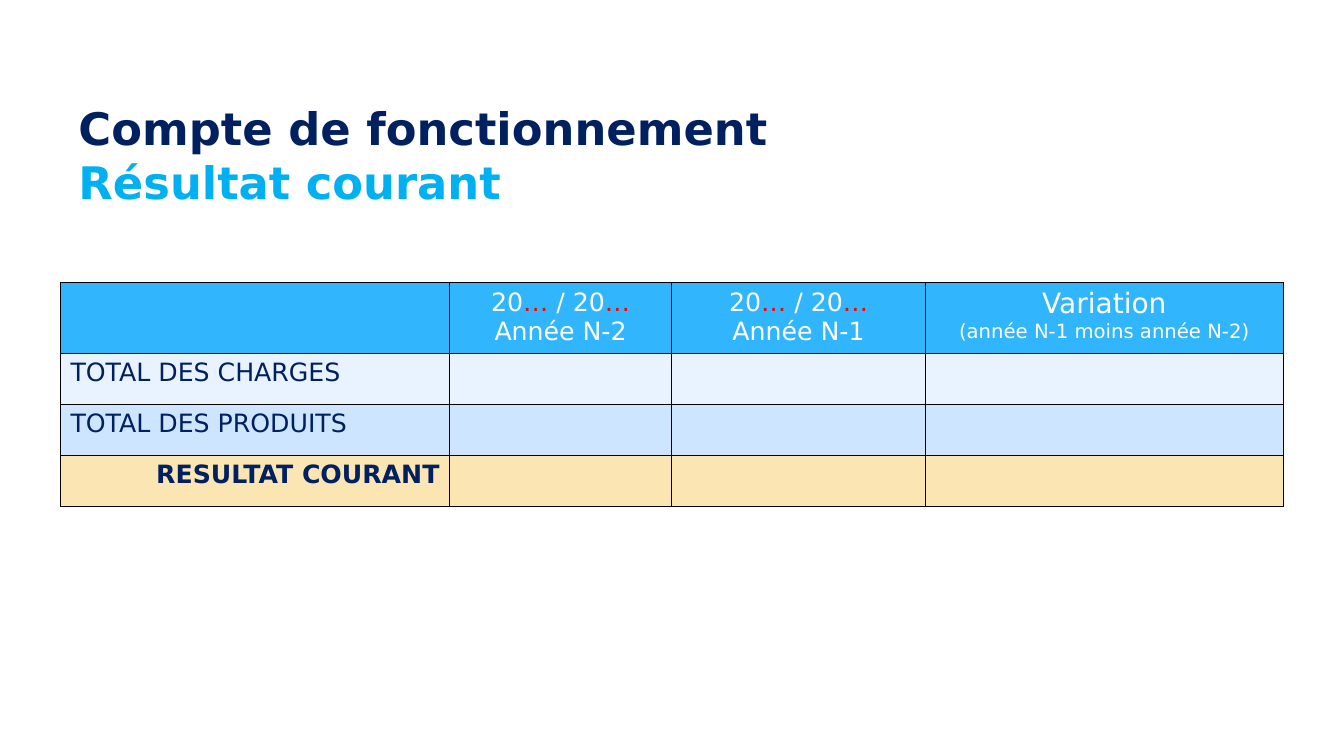
from pptx import Presentation
from pptx.dml.color import RGBColor as Rgb
from pptx.enum.text import PP_ALIGN as Align, MSO_ANCHOR as Anchor
from pptx.oxml import parse_xml
from pptx.oxml.ns import nsdecls
from pptx.util import Pt

FONT = "DejaVu Sans"
NAVY, SKY, WHITE, RED, BLACK = "002060", "00B0F0", "FFFFFF", "FF0000", "000000"
HEAD, PALE, LIGHT, SAND = "31B6FD", "E8F3FF", "CDE5FE", "FBE6B3"
WIDTHS = [278, 158.5, 181.5, 255.4]
HEIGHTS = [49.4, 36.5, 36.5, 36.5]


def color(code):
    return Rgb.from_string(code)


def add_run(para, text, size, tint, bold=False):
    run = para.add_run()
    run.text = text
    font = run.font
    font.name, font.size, font.bold = FONT, Pt(size), bold
    font.color.rgb = color(tint)


def add_title(slide):
    box = slide.shapes.add_textbox(Pt(49), Pt(66.2), Pt(761), Pt(62.6))
    frame = box.text_frame
    frame.word_wrap = True
    frame.vertical_anchor = Anchor.TOP
    frame.margin_top = Pt(6)
    para = frame.paragraphs[0]
    add_run(para, "Compte de fonctionnement", 32, NAVY, True)
    para.add_line_break()
    add_run(para, "Résultat courant", 32, SKY, True)


def add_edges(cell):
    # Borders come before the fill in the cell properties
    props = cell._tc.get_or_add_tcPr()
    for spot, side in enumerate(("lnL", "lnR", "lnT", "lnB")):
        props.insert(spot, parse_xml(
            f'<a:{side} {nsdecls("a")} w="{Pt(1)}"><a:solidFill>'
            f'<a:srgbClr val="{BLACK}"/></a:solidFill></a:{side}>'))


def fill_cell(cell, lines, align):
    frame = cell.text_frame
    for i, runs in enumerate(lines):
        para = frame.add_paragraph() if i else frame.paragraphs[0]
        para.alignment = align
        for run in runs:
            add_run(para, *run)


def year_lines(name):
    return [
        [("20", 18, WHITE), ("… ", 18, RED), ("/ 20", 18, WHITE), ("…", 18, RED)],
        [(name, 18, WHITE)],
    ]


def add_grid(slide):
    shape = slide.shapes.add_table(len(HEIGHTS), len(WIDTHS), Pt(43.2), Pt(202),
                                   Pt(sum(WIDTHS)), Pt(sum(HEIGHTS)))
    table = shape.table
    for col, width in zip(table.columns, WIDTHS):
        col.width = Pt(width)
    for row, height, tint in zip(table.rows, HEIGHTS, (HEAD, PALE, LIGHT, SAND)):
        row.height = Pt(height)
        for cell in row.cells:
            cell.fill.solid()
            cell.fill.fore_color.rgb = color(tint)
            add_edges(cell)
    return table


def main():
    deck = Presentation()
    deck.slide_width, deck.slide_height = Pt(960), Pt(540)
    slide = deck.slides.add_slide(deck.slide_layouts[6])
    add_title(slide)
    table = add_grid(slide)

    # Column heads
    change = [[("Variation", 20, WHITE)],
              [("(année N-1 moins année N-2)", 14, WHITE)]]
    heads = [year_lines("Année N-2"), year_lines("Année N-1"), change]
    for col, lines in enumerate(heads, 1):
        fill_cell(table.cell(0, col), lines, Align.CENTER)

    # Row labels
    labels = [("TOTAL DES CHARGES", False, Align.LEFT),
              ("TOTAL DES PRODUITS", False, Align.LEFT),
              ("RESULTAT COURANT", True, Align.RIGHT)]
    for row, (text, bold, align) in enumerate(labels, 1):
        fill_cell(table.cell(row, 0), [[(text, 18, NAVY, bold)]], align)

    deck.save("out.pptx")


if __name__ == "__main__":
    main()
